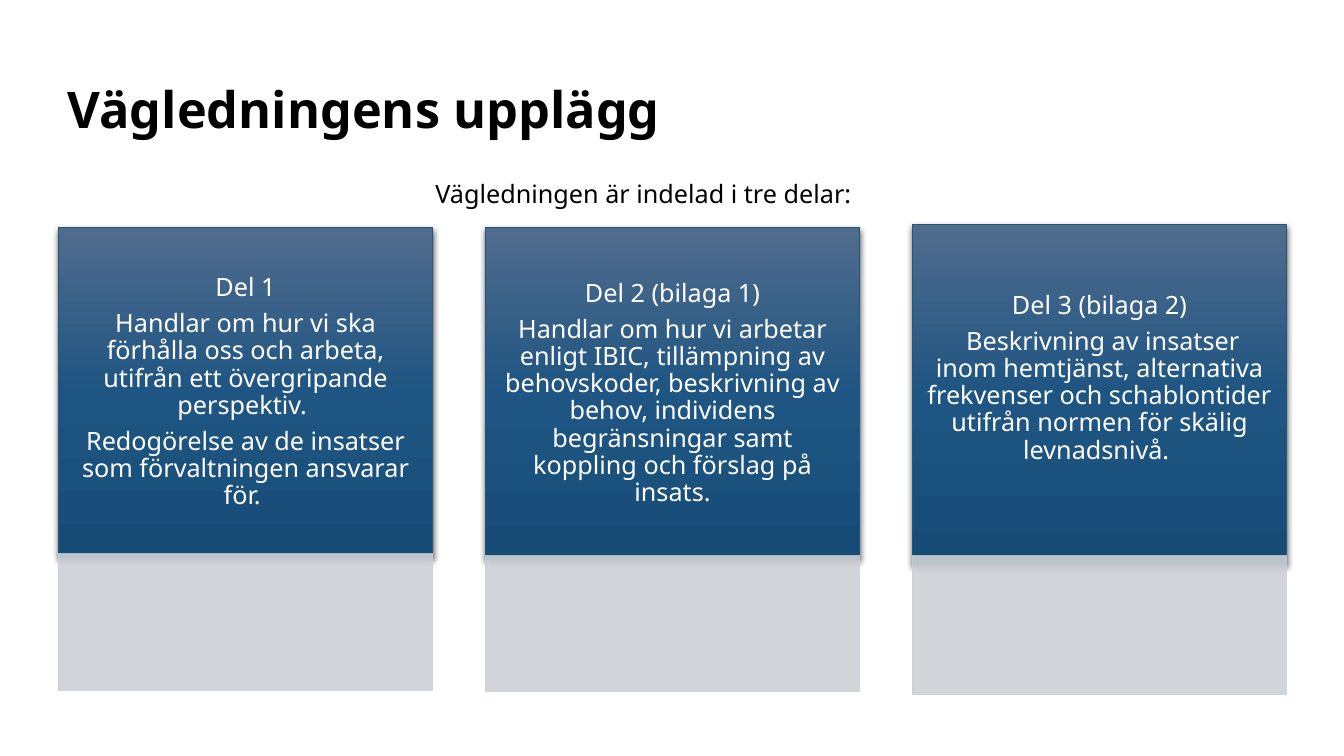
from lxml.etree import SubElement
from pptx import Presentation
from pptx.dml.color import RGBColor
from pptx.enum.shapes import MSO_SHAPE
from pptx.enum.text import MSO_ANCHOR, MSO_AUTO_SIZE, PP_ALIGN
from pptx.oxml import parse_xml
from pptx.oxml.ns import nsdecls, qn
from pptx.util import Inches, Pt

FONT = "Noto Sans"
BLACK, WHITE = "000000", "FFFFFF"
CARD_LINE, PANEL = "23557D", "CDD1D7"
CARD_STOPS = [(0, "506C8D"), (50, "1F5582"), (100, "174C77")]

# Grid: three equal columns, in inches
COLUMN_LEFT, COLUMN_STEP, COLUMN_WIDTH = 0.58, 4.235, 3.71

# Per column: card top and height, panel top and height, bottom inset, text
COLUMNS = [
    (2.26, 3.27, 5.49, 1.36, 0.08, [
        "Del 1",
        "Handlar om hur vi ska förhålla oss och arbeta, utifrån ett "
        "övergripande perspektiv. ",
        "Redogörelse av de insatser som förvaltningen ansvarar för. "]),
    (2.26, 3.29, 5.51, 1.35, 0.08, [
        "Del 2 (bilaga 1)",
        "Handlar om hur vi arbetar enligt IBIC, tillämpning av behovskoder, "
        "beskrivning av behov, individens begränsningar samt koppling och "
        "förslag på insats."]),
    (2.23, 3.37, 5.51, 1.38, 0.4, [
        "Del 3 (bilaga 2)",
        " Beskrivning av insatser inom hemtjänst, alternativa frekvenser och "
        "schablontider utifrån normen för skälig levnadsnivå. "]),
]


def color(hex_value):
    return RGBColor.from_string(hex_value)


def format_text(para, size, hex_value, bold=False):
    for run in para.runs:
        run.font.name = FONT
        run.font.size = Pt(size)
        run.font.bold = bold
        run.font.color.rgb = color(hex_value)


def add_box(slide, left, top, width, height, line_color):
    box = slide.shapes.add_shape(MSO_SHAPE.RECTANGLE, Inches(left), Inches(top),
                                 Inches(width), Inches(height))
    box.shadow.inherit = False
    box.line.color.rgb = color(line_color)
    box.line.width = Pt(0.5)
    return box


def set_alpha(color_element, percent):
    SubElement(color_element, qn("a:alpha"), val=str(percent * 1000))


def fill_gradient(box, stops):
    """Vertical gradient, first stop on top."""
    box.fill.background()
    stop_xml = "".join(
        f'<a:gs pos="{position * 1000}"><a:srgbClr val="{hex_value}"/></a:gs>'
        for position, hex_value in stops)
    gradient = parse_xml(
        f'<a:gradFill {nsdecls("a")} rotWithShape="1"><a:gsLst>{stop_xml}'
        '</a:gsLst><a:lin ang="5400000" scaled="0"/></a:gradFill>')
    properties = box._element.spPr
    properties.replace(properties.find(qn("a:noFill")), gradient)


def add_shadow(box):
    effects = box._element.spPr.find(qn("a:effectLst"))
    shadow = SubElement(effects, qn("a:outerShdw"), blurRad=str(Pt(4.5)),
                        dist=str(Pt(1.5)), dir="5400000", algn="ctr",
                        rotWithShape="0")
    set_alpha(SubElement(shadow, qn("a:srgbClr"), val=BLACK), 63)


def add_card(slide, left, top, height, bottom_inset, texts):
    card = add_box(slide, left, top, COLUMN_WIDTH, height, CARD_LINE)
    fill_gradient(card, CARD_STOPS)
    add_shadow(card)
    frame = card.text_frame
    frame.word_wrap = True
    frame.vertical_anchor = MSO_ANCHOR.MIDDLE
    frame.margin_left = frame.margin_right = Inches(0.14)
    frame.margin_top, frame.margin_bottom = Inches(0.08), Inches(bottom_inset)
    frame.text = "\n".join(texts)
    for para in frame.paragraphs:
        para.alignment = PP_ALIGN.CENTER
        para.line_spacing = 0.9
        para.space_after = Pt(6.3)
        format_text(para, 18, WHITE)


def add_panel(slide, left, top, height):
    panel = add_box(slide, left, top, COLUMN_WIDTH, height, PANEL)
    panel.fill.solid()
    panel.fill.fore_color.rgb = color(PANEL)
    for color_element in panel._element.spPr.iter(qn("a:srgbClr")):
        set_alpha(color_element, 90)


def add_title(slide, text):
    title = slide.shapes.title
    title.left, title.top = Inches(0.57), Inches(0.51)
    title.width, title.height = Inches(10.93), Inches(1.21)
    frame = title.text_frame
    frame.text = text
    frame.auto_size = MSO_AUTO_SIZE.NONE
    frame.vertical_anchor = MSO_ANCHOR.MIDDLE
    para = frame.paragraphs[0]
    para.alignment = PP_ALIGN.LEFT
    para.line_spacing = 0.9
    format_text(para, 36, BLACK, bold=True)


def add_intro(slide, text):
    box = slide.shapes.add_textbox(Inches(4.22), Inches(1.72),
                                   Inches(5.3), Inches(0.4))
    frame = box.text_frame
    frame.word_wrap = True
    frame.text = text
    format_text(frame.paragraphs[0], 18, BLACK)


def main():
    deck = Presentation()
    deck.slide_width, deck.slide_height = Inches(13.33), Inches(7.5)
    page = deck.slides.add_slide(deck.slide_layouts[5])

    # Heading
    add_title(page, "Vägledningens upplägg")

    # The three parts, each a card above a pale panel
    for index, column in enumerate(COLUMNS):
        card_top, card_height, panel_top, panel_height, inset, texts = column
        left = COLUMN_LEFT + index * COLUMN_STEP
        add_card(page, left, card_top, card_height, inset, texts)
        add_panel(page, left, panel_top, panel_height)

    # Introduction line
    add_intro(page, "Vägledningen är indelad i tre delar:")
    deck.save("out.pptx")


if __name__ == "__main__":
    main()
